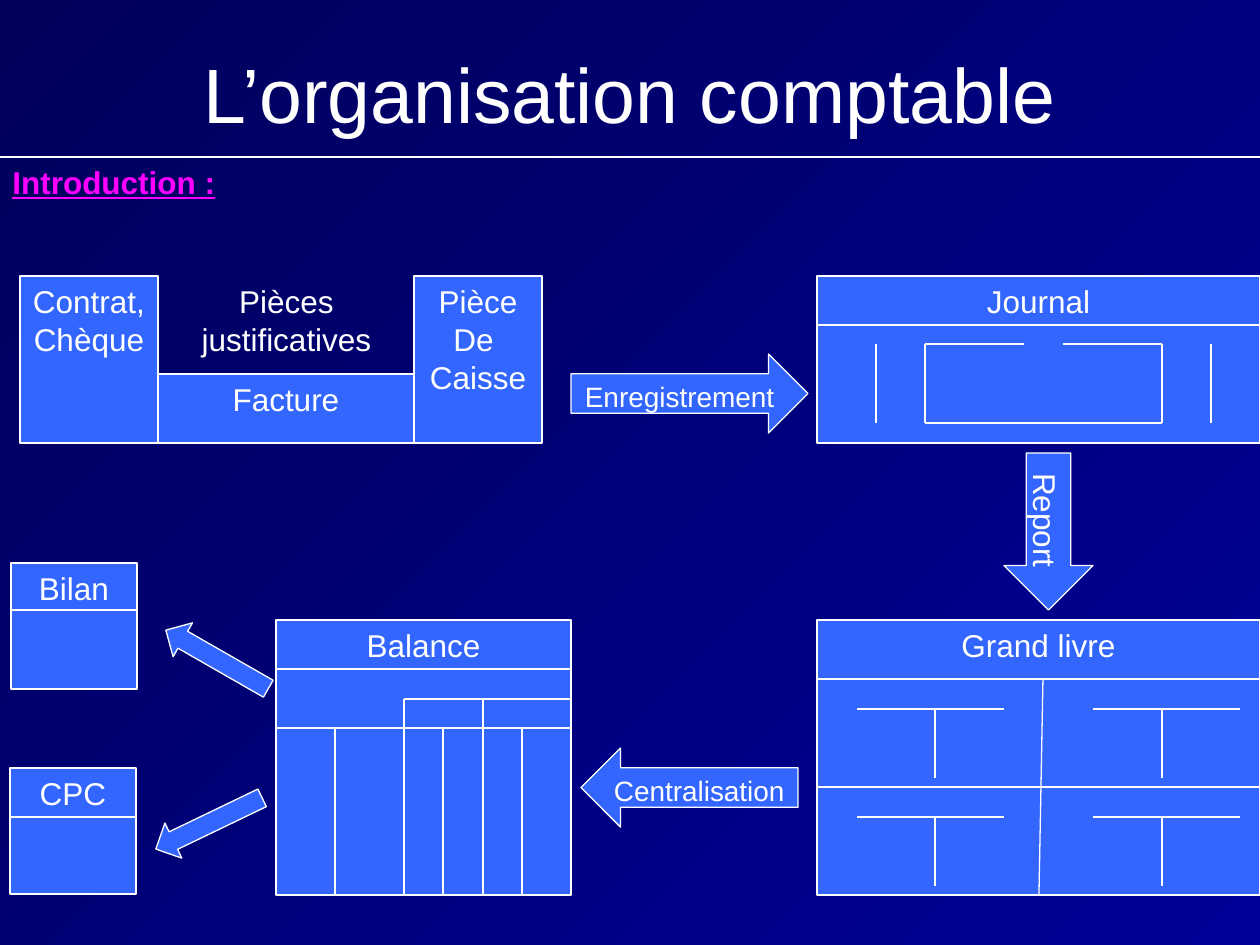
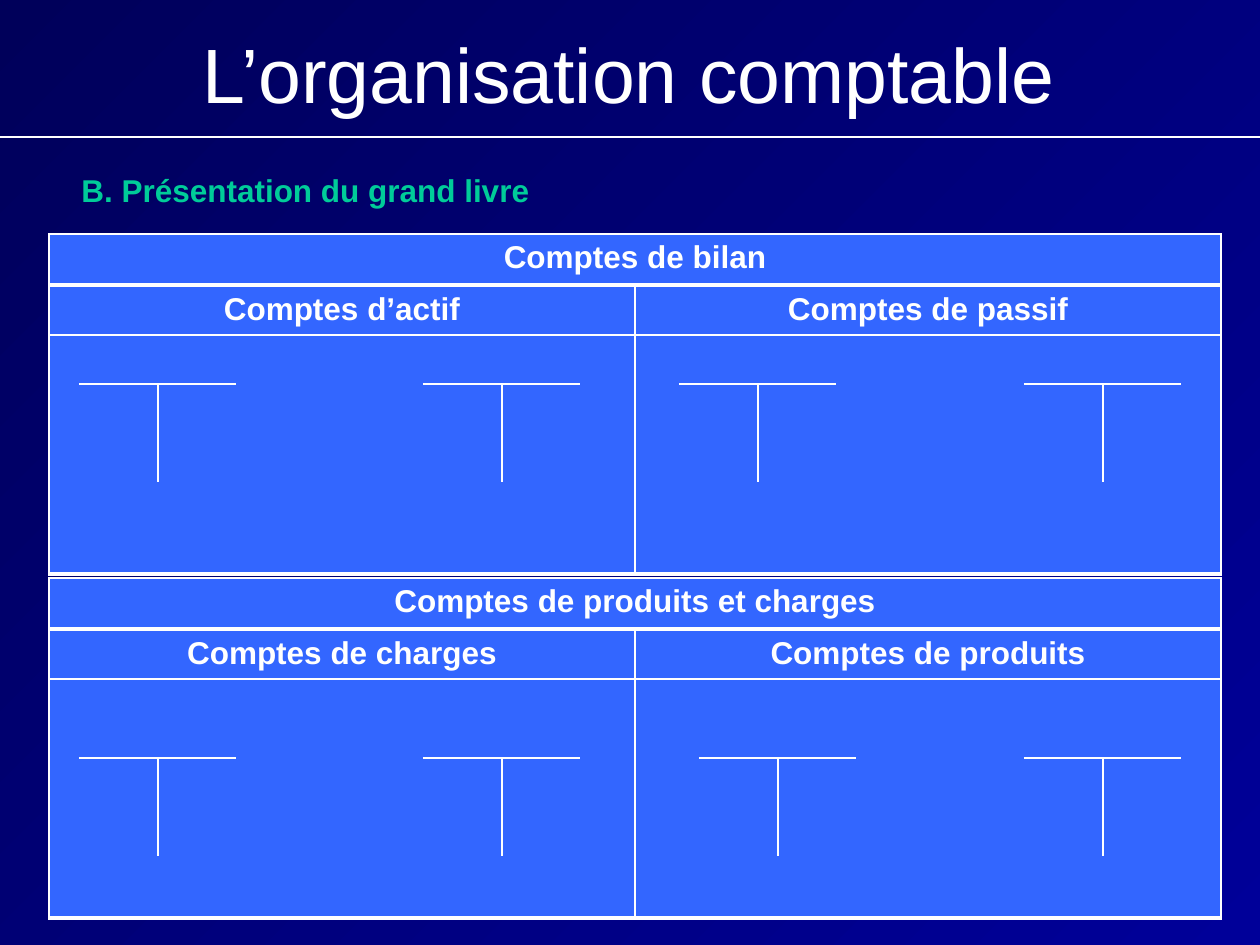
"""Build two slides on accounting organisation: the document flow and the general ledger."""
from itertools import product
from lxml.etree import SubElement
from pptx import Presentation
from pptx.dml.color import RGBColor
from pptx.enum.shapes import MSO_CONNECTOR, MSO_SHAPE
from pptx.enum.text import MSO_ANCHOR, PP_ALIGN
from pptx.oxml import parse_xml
from pptx.oxml.ns import nsdecls, qn
from pptx.util import Pt

PX = 914400 / 126
FONT = "Arial"
WHITE = RGBColor(0xFF, 0xFF, 0xFF)
BLUE = RGBColor(0x33, 0x66, 0xFF)
PINK = RGBColor(0xFF, 0x00, 0xFF)
GREEN = RGBColor(0x00, 0xCC, 0x99)
NAVY_DARK = RGBColor(0x00, 0x00, 0x5A)
NAVY = RGBColor(0x00, 0x00, 0x99)
RECT, RIGHT, LEFT = MSO_SHAPE.RECTANGLE, MSO_SHAPE.RIGHT_ARROW, MSO_SHAPE.LEFT_ARROW


def add_box(s, kind, x, y, w, h, text="", size=18, color=WHITE, align=PP_ALIGN.CENTER, bold=False):
    pos = [round(v * PX) for v in (x, y, w, h)]
    if kind is None:
        sp = s.shapes.add_textbox(*pos)
    else:
        sp = s.shapes.add_shape(kind, *pos)
        sp.shadow.inherit = False
        sp.fill.solid()
        sp.fill.fore_color.rgb = BLUE
        sp.line.color.rgb = WHITE
        sp.line.width = Pt(0.75)
    tf = sp.text_frame
    tf.word_wrap = kind in (None, RECT)
    tf.vertical_anchor = MSO_ANCHOR.TOP
    tf.text = text
    for p in tf.paragraphs:
        p.alignment = align
        for r in p.runs:
            r.font.name, r.font.size, r.font.bold = FONT, Pt(size), bold
            r.font.color.rgb = color
    return sp


def add_line(s, x1, y1, x2, y2):
    ends = [round(v * PX) for v in (x1, y1, x2, y2)]
    ln = s.shapes.add_connector(MSO_CONNECTOR.STRAIGHT, *ends)
    ln.line.color.rgb = WHITE
    ln.line.width = Pt(0.75)
    SubElement(ln._element.spPr, qn("a:effectLst"))


prs = Presentation()
prs.slide_width, prs.slide_height = round(1260 * PX), round(945 * PX)

slides = []
for x, y, w, rule_y in [(63, 40, 1134, 157), (186, 20, 886, 137)]:
    s = prs.slides.add_slide(prs.slide_layouts[6])
    fill = s.background.fill
    fill.gradient()
    fill.gradient_angle = 315
    for stop, color in zip(fill.gradient_stops, (NAVY_DARK, NAVY)):
        stop.color.rgb = color
    for stop, position in zip(fill.gradient_stops, (0, 1)):
        stop.position = position
    add_box(s, None, x, y, w, 106, "L’organisation comptable", 44)
    add_line(s, 0, rule_y, 1260, rule_y)
    slides.append(s)
flow, ledger = slides

sp = add_box(flow, None, 0, 157, 400, 50, "Introduction :", 18, PINK, PP_ALIGN.LEFT, True)
sp.text_frame.paragraphs[0].runs[0].font.underline = True
add_box(flow, None, 178, 276, 217, 89, "Pièces justificatives")

for x, y, w, h, text in [
    (20, 276, 138, 167, "Contrat,\nChèque"),
    (158, 374, 256, 69, "Facture"),
    (414, 276, 128, 167, "Pièce\nDe \nCaisse"),
    (817, 276, 443, 167, "Journal"),
    (817, 620, 443, 275, "Grand livre"),
    (276, 620, 295, 275, "Balance"),
    (11, 563, 126, 126, "Bilan"),
    (10, 768, 126, 126, "CPC"),
]:
    add_box(flow, RECT, x, y, w, h, text)

for kind, x, y, w, h, angle, text, size in [
    (RIGHT, 571, 354, 237, 79, 0, "Enregistrement", 16),
    (RIGHT, 970, 487, 157, 89, 90, "Report", 18),
    (LEFT, 581, 748, 217, 79, 0, "Centralisation", 16),
    (LEFT, 158, 640, 118, 39, 29.8, "", 18),
    (LEFT, 150, 804, 118, 39, 334.3, "", 18),
]:
    add_box(flow, kind, x, y, w, h, text, size).rotation = angle

for x1, x2, y in [
    (817, 1260, 325), (925, 1024, 344), (1063, 1162, 344), (925, 1162, 423),
    (817, 1260, 679), (817, 1260, 787),
    (276, 571, 669), (404, 571, 699), (276, 571, 728),
    (11, 137, 610), (10, 136, 817),
]:
    add_line(flow, x1, y, x2, y)
for x in (876, 925, 1162, 1211):
    add_line(flow, x, 344, x, 423)
for x, y in [(335, 728), (404, 699), (443, 728), (483, 699), (522, 728)]:
    add_line(flow, x, y, x, 895)
add_line(flow, 1043, 679, 1039, 895)

accounts = [(flow, x, y, 147, stem, 69)
            for (x, stem), y in product([(857, 935), (1093, 1162)], (709, 817))]

add_box(ledger, None, 69, 165, 561, 50, "B. Présentation du grand livre", 18, GREEN, PP_ALIGN.LEFT, True)
for y, heights, texts in [
    (234, (51, 51, 239), (["Comptes de bilan"], ["Comptes d’actif", "Comptes de passif"], ["", ""])),
    (578, (51, 51, 239), (["Comptes de produits et charges"],
                          ["Comptes de charges", "Comptes de produits"], ["", ""])),
]:
    for top, h, labels in zip((y, y + 52, y + 101), heights, texts):
        pos = [round(v * PX) for v in (49, top, 1172, h)]
        tbl = ledger.shapes.add_table(1, len(labels), *pos).table
        tbl.first_row = tbl.horz_banding = False
        for cell, label in zip(tbl.rows[0].cells, labels):
            cell.fill.solid()
            cell.fill.fore_color.rgb = BLUE
            cell.text = label
            p = cell.text_frame.paragraphs[0]
            p.alignment = PP_ALIGN.CENTER
            for r in p.runs:
                r.font.name, r.font.size, r.font.bold = FONT, Pt(18), True
                r.font.color.rgb = WHITE
            tcPr = cell._tc.get_or_add_tcPr()
            for i, (side, width) in enumerate([("L", 1), ("R", 1), ("T", 1), ("B", 3)]):
                tcPr.insert(i, parse_xml(
                    f'<a:ln{side} {nsdecls("a")} w="{Pt(width)}"><a:solidFill>'
                    f'<a:srgbClr val="{WHITE}"/></a:solidFill></a:ln{side}>'))

for y, lefts in [(384, (79, 423, 679, 1024)), (758, (79, 423, 699, 1024))]:
    accounts += [(ledger, x, y, 157, x + 79, 98) for x in lefts]

for s, x, y, w, stem, h in accounts:
    add_line(s, x, y, x + w, y)
    add_line(s, stem, y, stem, y + h)

prs.save("out.pptx")
